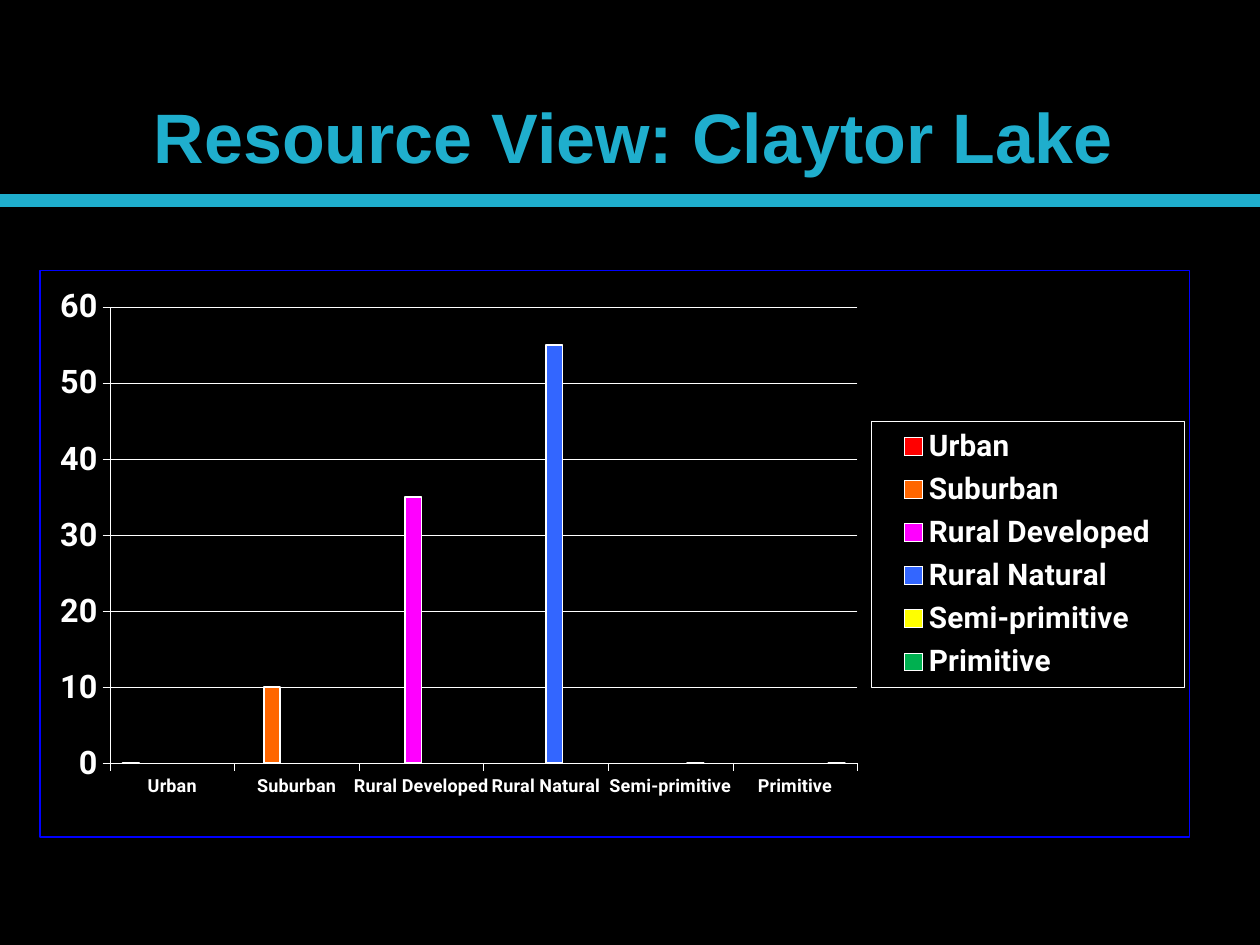
from pptx import Presentation
from pptx.chart.data import CategoryChartData
from pptx.dml.color import RGBColor
from pptx.enum import chart as ec, shapes, text
from pptx.oxml import parse_xml
from pptx.oxml.ns import nsdecls, qn
from pptx.util import Pt


def rgb(code):
    return RGBColor.from_string(code)


def layout(x, y, w, h, inner=""):
    return parse_xml(
        f'<c:layout {nsdecls("c")}><c:manualLayout>{inner}'
        '<c:xMode val="edge"/><c:yMode val="edge"/>'
        f'<c:x val="{x}"/><c:y val="{y}"/><c:w val="{w}"/><c:h val="{h}"/>'
        '</c:manualLayout></c:layout>')


prs = Presentation()
prs.slide_width, prs.slide_height = Pt(720), Pt(540)
slide = prs.slides.add_slide(prs.slide_layouts[5])
slide.background.fill.solid()
slide.background.fill.fore_color.rgb = rgb("000000")

# Rule under the title
rule = slide.shapes.add_shape(
    shapes.MSO_SHAPE.RECTANGLE, Pt(0), Pt(113), Pt(720), Pt(3.6))
rule.shadow.inherit = False
rule.fill.solid()
rule.fill.fore_color.rgb = rgb("FFFFFF")
rule.line.color.rgb = rgb("1FAECD")
rule.line.width = Pt(3.78)

# Title
title = slide.shapes.title
title.left, title.top, title.width, title.height = (
    Pt(36), Pt(23), Pt(648), Pt(108.7))
frame = title.text_frame
frame.text = "Resource View: Claytor Lake"
frame.vertical_anchor = text.MSO_ANCHOR.MIDDLE
frame.margin_left = Pt(7.2)
frame.margin_right = frame.margin_top = frame.margin_bottom = Pt(3.6)
para = frame.paragraphs[0]
para.alignment = text.PP_ALIGN.CENTER
para.font.name, para.font.size, para.font.bold = "Arial", Pt(40), True
para.font.color.rgb = rgb("1FAECD")

# Chart data: each series fills only its own category
zones = [("Urban", 0, "FF0000"), ("Suburban", 10, "FF6600"),
         ("Rural Developed", 35, "FF00FF"), ("Rural Natural", 55, "3366FF"),
         ("Semi-primitive", 0, "FFFF00"), ("Primitive", 0, "00B050")]
data = CategoryChartData()
data.categories = [zone[0] for zone in zones]
for i, (name, value, _) in enumerate(zones):
    data.add_series(
        name, [value if j == i else None for j in range(len(zones))])
chart = slide.shapes.add_chart(
    ec.XL_CHART_TYPE.COLUMN_CLUSTERED,
    Pt(22.3), Pt(154.1), Pt(658), Pt(324.7), data).chart
chart.has_title = False

# Bars
plot = chart.plots[0]
plot.gap_width, plot.overlap = 150, 0
plot.vary_by_categories = False
for bar, (_, _, color) in zip(plot.series, zones):
    bar.format.fill.solid()
    bar.format.fill.fore_color.rgb = rgb(color)
    bar.format.line.color.rgb = rgb("FFFFFF")
    bar.format.line.width = Pt(1.03)

# Axes and legend
cat, val = chart.category_axis, chart.value_axis
cat.tick_label_position = ec.XL_TICK_LABEL_POSITION.LOW
val.minimum_scale, val.maximum_scale, val.major_unit = 0, 60, 10
val.has_major_gridlines = True
for axis in (cat, val):
    axis.major_tick_mark = ec.XL_TICK_MARK.OUTSIDE
    axis.minor_tick_mark = ec.XL_TICK_MARK.NONE
for part in (cat, val, val.major_gridlines):
    part.format.line.color.rgb = rgb("FFFFFF")
    part.format.line.width = Pt(0.25)
chart.has_legend = True
legend = chart.legend
legend.position = ec.XL_LEGEND_POSITION.RIGHT
legend.include_in_layout = False
for font, size in ((chart.font, 18.5), (cat.tick_labels.font, 10.3),
                   (val.tick_labels.font, 18.5), (legend.font, 17)):
    font.name, font.size, font.bold = "Roboto", Pt(size), True
    font.color.rgb = rgb("FFFFFF")

# Plot and legend places
root = chart._chartSpace
area, key = root.find(".//" + qn("c:plotArea")), root.find(".//" + qn("c:legend"))
for box in (area, key):
    for old in box.findall(qn("c:layout")):
        box.remove(old)
area.insert(0, layout(0.061, 0.064, 0.65, 0.806,
                      '<c:layoutTarget val="inner"/>'))
key.find(qn("c:overlay")).addprevious(layout(0.723, 0.266, 0.272, 0.47))

# Square frames round the chart and the legend
for box, color, width in ((root, "0000FF", 1.03), (key, "FFFFFF", 0.25)):
    box.find(qn("c:txPr")).addprevious(parse_xml(
        f'<c:spPr {nsdecls("c", "a")}><a:noFill/><a:ln w="{Pt(width)}">'
        f'<a:solidFill><a:srgbClr val="{color}"/></a:solidFill></a:ln></c:spPr>'))
for old in root.findall(qn("c:roundedCorners")):
    root.remove(old)
root.find(qn("c:date1904")).addnext(
    parse_xml(f'<c:roundedCorners {nsdecls("c")} val="0"/>'))

prs.save("out.pptx")
